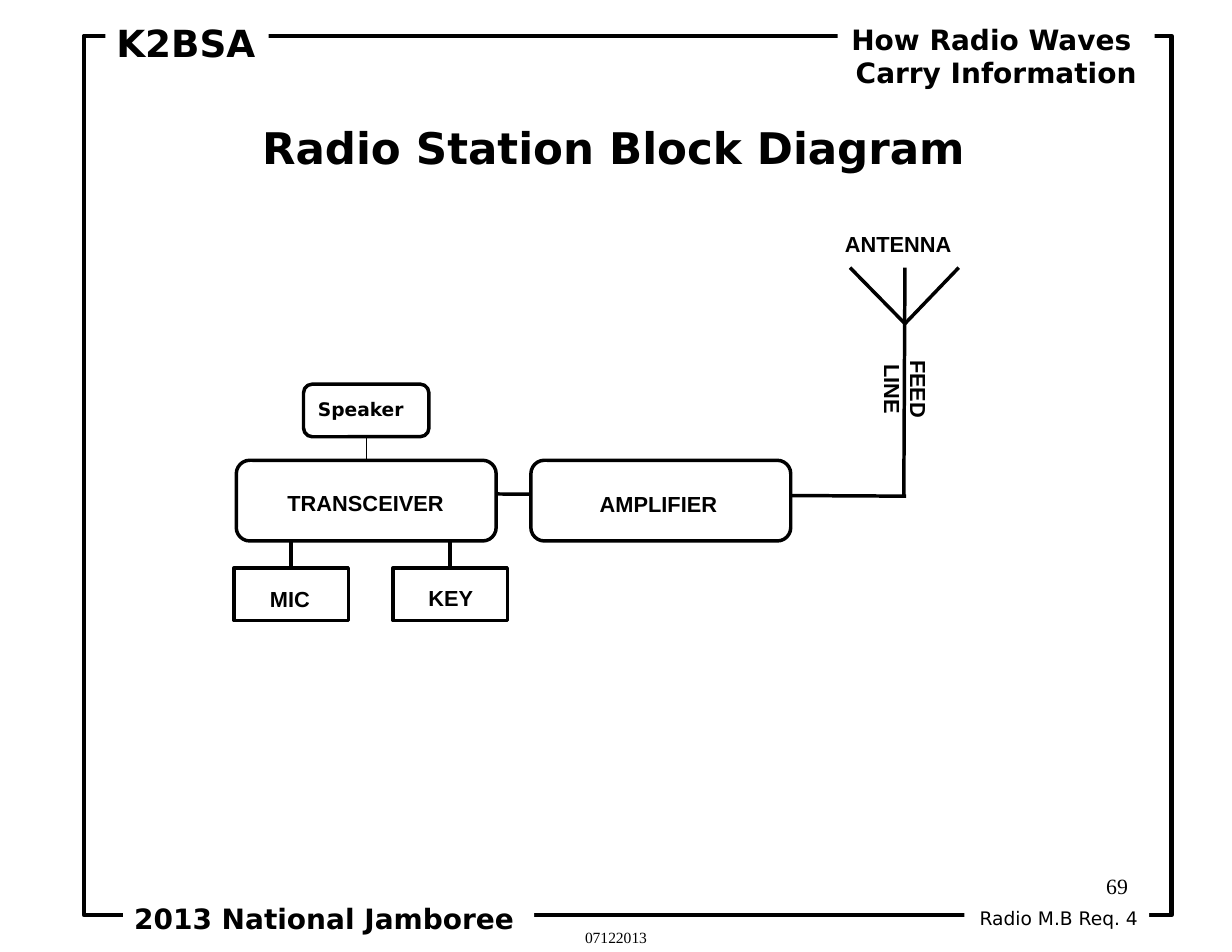
from pptx import Presentation
from pptx.dml.color import RGBColor as RGB
from pptx.enum.shapes import MSO_CONNECTOR as Conn, MSO_SHAPE as Kind
from pptx.enum.text import MSO_ANCHOR as Anchor, MSO_AUTO_SIZE as Auto, PP_ALIGN as Align
from pptx.util import Inches, Pt
from lxml.etree import SubElement

HUES = {"ink": "000000", "paper": "FFFFFF"}
INK, PAPER = (RGB.from_string(HUES[key]) for key in ("ink", "paper"))
SANS, ARIAL, SERIF = "DejaVu Sans", "Arial", "Times New Roman"
COLS, ROWS = 110, 85

deck = Presentation()
deck.slide_width, deck.slide_height = Inches(11), Inches(8.5)
col, row = deck.slide_width / COLS, deck.slide_height / ROWS
slide = deck.slides.add_slide(deck.slide_layouts[5])
shapes = slide.shapes


def grid(*spots):
    return [round(n * (row if i % 2 else col)) for i, n in enumerate(spots)]


def write(box, lines, size, face, bold, align, wrap=False):
    frame = box.text_frame
    frame.word_wrap = wrap
    frame.auto_size = Auto.NONE
    frame.vertical_anchor = Anchor.TOP
    frame.text = lines
    for para in frame.paragraphs:
        para.alignment = align
        font = para.font
        font.name, font.size, font.bold = face, Pt(size), bold
        font.color.rgb = INK


border = shapes.add_shape(Kind.RECTANGLE, *grid(7.5, 3.2, 97.1, 78.5))
border.shadow.inherit = False
border.fill.background()
border.line.color.rgb = INK
border.line.width = Pt(3)

margin = [
    ("K2BSA", (9.4, 1.3, 14.6, 5), 24, SANS, True, Align.LEFT, True),
    ("How Radio Waves \nCarry Information", (74.8, 1.5, 28.3, 7.1), 18, SANS, True, Align.CENTER, True),
    ("2013 National Jamboree", (11, 80, 36.7, 4), 18, SANS, True, Align.LEFT, True),
    ("Radio M.B Req. 4", (86.1, 80.5, 16.5, 3), 12, SANS, False, Align.RIGHT, True),
    ("69", (78.8, 77.4, 22.9, 3.2), 14, SERIF, False, Align.RIGHT, False),
    ("07122013", (45, 82.4, 20, 3.6), 10, SERIF, False, Align.CENTER, False),
]
for text, spot, size, face, bold, align, solid in margin:
    box = shapes.add_textbox(*grid(*spot))
    if solid:
        box.fill.solid()
        box.fill.fore_color.rgb = PAPER
    write(box, text, size, face, bold, align, not solid)

wires = []
for ends in [
    (80.7, 44.3, 80.8, 23.9),
    (80.8, 28.9, 85.6, 23.9),
    (80.8, 28.9, 75.9, 23.9),
    (43.1, 44.1, 80.9, 44.3),
]:
    wires.append((shapes.add_connector(Conn.STRAIGHT, *grid(*ends)), 2.25))

blocks = {}
for name, kind, spot in [
    ("radio", Kind.ROUNDED_RECTANGLE, (21.1, 41.1, 23.2, 7.2)),
    ("amp", Kind.ROUNDED_RECTANGLE, (47.4, 41.1, 23.2, 7.2)),
    ("mic", Kind.RECTANGLE, (20.9, 50.7, 10.2, 4.7)),
    ("key", Kind.RECTANGLE, (35.1, 50.7, 10.2, 4.7)),
    ("speaker", Kind.ROUNDED_RECTANGLE, (27.1, 34.3, 11.2, 4.7)),
]:
    block = shapes.add_shape(kind, *grid(*spot))
    block.shadow.inherit = False
    block.fill.solid()
    block.fill.fore_color.rgb = PAPER
    block.line.color.rgb = INK
    block.line.width = Pt(2.25)
    blocks[name] = block

for name, x in [("mic", 26), ("key", 40.2)]:
    wire = shapes.add_connector(Conn.STRAIGHT, *grid(x, 50.7, x, 48.3))
    wire.begin_connect(blocks[name], 0)
    wires.append((wire, 2.25))

wire = shapes.add_connector(Conn.STRAIGHT, *grid(32.7, 39, 32.7, 41.1))
wire.begin_connect(blocks["speaker"], 2)
wire.end_connect(blocks["radio"], 0)
wires.append((wire, 0.75))

for wire, width in wires:
    wire.line.color.rgb = INK
    wire.line.width = Pt(width)
    props = wire._element.spPr
    SubElement(props, "{%s}effectLst" % props.nsmap["a"])

for text, spot, turn in [
    ("TRANSCEIVER", (24.6, 43.2, 16.1, 3.4), 0),
    ("AMPLIFIER", (52.5, 43.3, 12.6, 3.4), 0),
    ("ANTENNA", (74.4, 20.1, 11.6, 3.4), 0),
    ("FEED\nLINE", (77.2, 31.9, 7.3, 5.7), 90),
    ("KEY", (37.2, 51.7, 6.1, 3.4), 0),
    ("MIC", (23.1, 51.8, 5.6, 3.4), 0),
]:
    label = shapes.add_textbox(*grid(*spot))
    label.rotation = turn
    write(label, text, 14, ARIAL, True, Align.CENTER)

label = shapes.add_textbox(*grid(27.4, 35, 9.7, 3))
write(label, "Speaker", 12, SANS, True, Align.LEFT)

title = shapes.title
title.left, title.top, title.width, title.height = grid(22.4, 10.3, 65.1, 5.7)
write(title, "Radio Station Block Diagram", 28, SANS, True, Align.LEFT)

deck.save("out.pptx")
